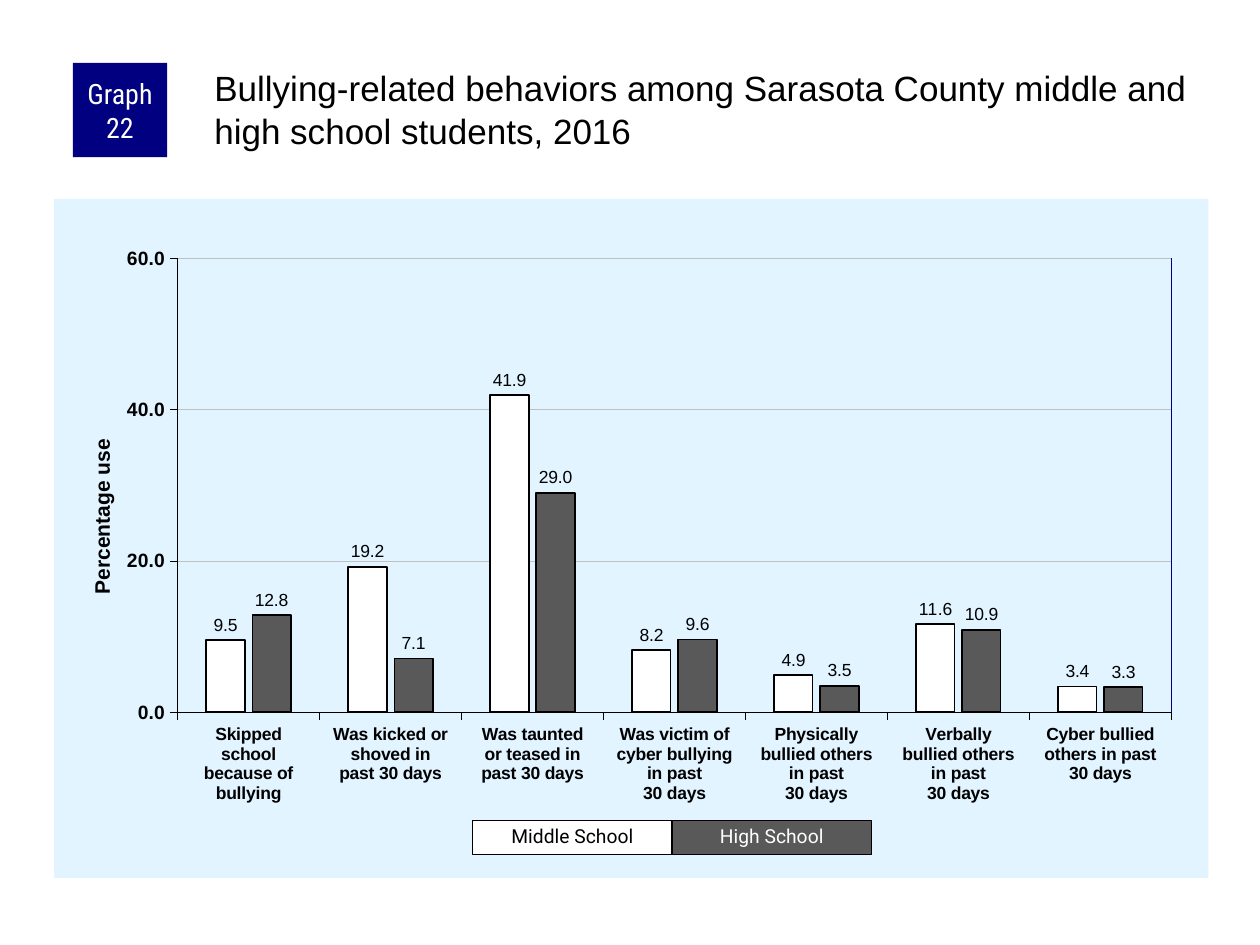
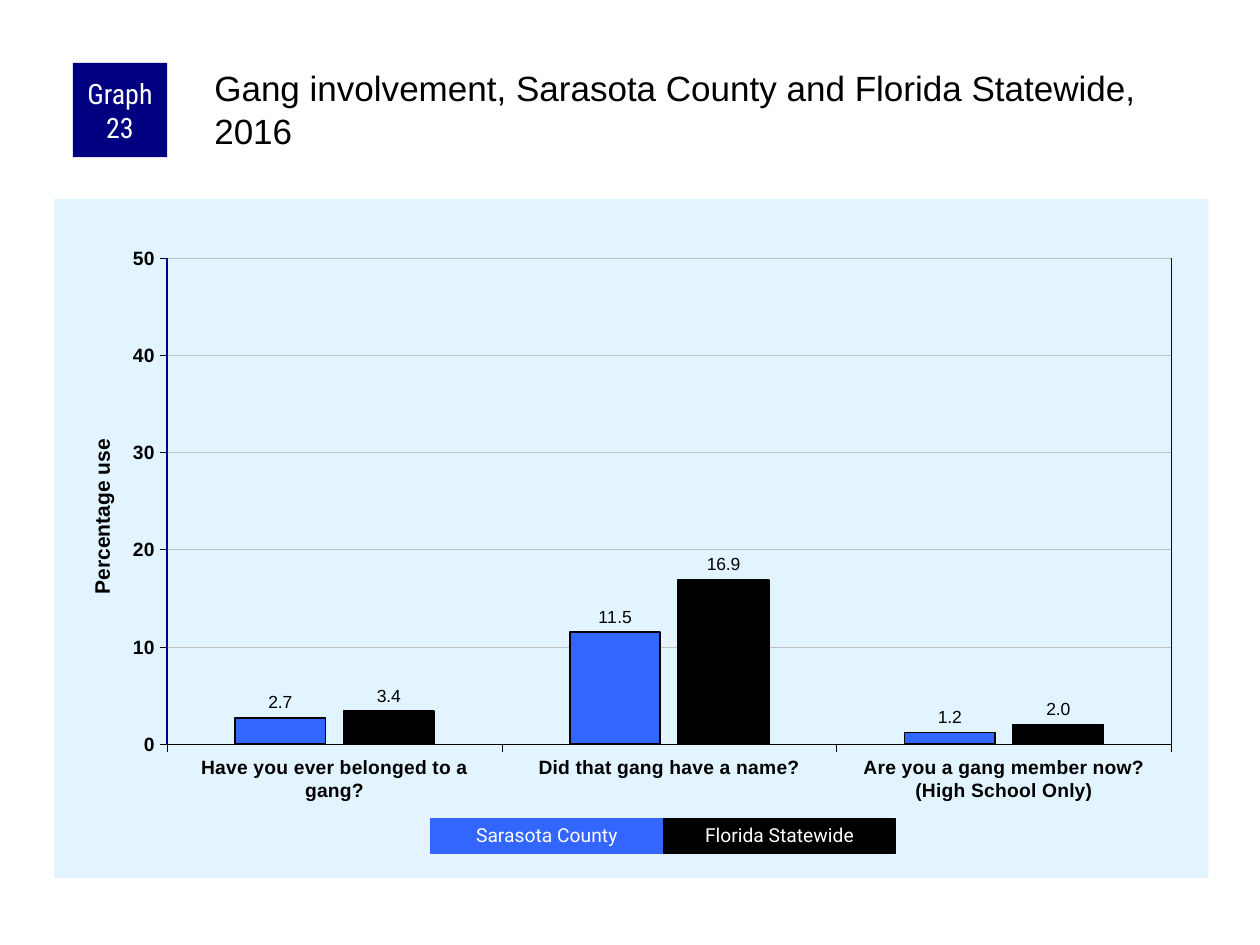
from dataclasses import dataclass

from lxml import etree
from pptx import Presentation
from pptx.chart.chart import Chart
from pptx.chart.data import CategoryChartData
from pptx.dml.color import RGBColor
from pptx.enum.chart import XL_CHART_TYPE, XL_LABEL_POSITION, XL_TICK_MARK
from pptx.enum.shapes import MSO_CONNECTOR, MSO_SHAPE
from pptx.enum.text import MSO_ANCHOR, MSO_AUTO_SIZE, PP_ALIGN
from pptx.oxml import parse_xml
from pptx.oxml.ns import nsdecls, qn
from pptx.slide import Slide
from pptx.util import Cm, Pt

COLUMNS = XL_CHART_TYPE.COLUMN_CLUSTERED
OUTSIDE_END = XL_LABEL_POSITION.OUTSIDE_END
TICK_OUT = XL_TICK_MARK.OUTSIDE
STRAIGHT = MSO_CONNECTOR.STRAIGHT
RECT = MSO_SHAPE.RECTANGLE
TOP, MIDDLE = MSO_ANCHOR.TOP, MSO_ANCHOR.MIDDLE
LEFT, CENTER = PP_ALIGN.LEFT, PP_ALIGN.CENTER
NO_AUTOFIT = MSO_AUTO_SIZE.NONE

NAVY, PALE_BLUE, BLUE = "000080", "E1F4FF", "3366FF"
BLACK, WHITE, DARK_GREY, GRID_GREY = "000000", "FFFFFF", "595959", "C0C0C0"
SANS, LEGEND_FONT, BADGE_FONT = "Arial", "Roboto", "Roboto Condensed"
CHART_LEFT, CHART_TOP, CHART_WIDTH, CHART_HEIGHT = 1.09, 4.01, 23.27, 13.69
LEGEND_HEIGHT = 0.69


@dataclass
class Series:
    name: str
    values: list[float]
    fill: str
    text: str
    outline: str


@dataclass
class Graph:
    number: int
    title: str
    categories: list[str]
    series: list[Series]
    maximum: int
    step: int
    value_format: str
    category_size: float
    plot: tuple[float, float, float, float]
    frame_sides: list[int]
    legend: tuple[float, float, float]


GRAPHS = [
    Graph(
        22, "Bullying-related behaviors among Sarasota County middle and high school students, 2016",
        ["Skipped\nschool\nbecause of\nbullying",
         "Was kicked or\nshoved in\npast 30 days",
         "Was taunted\nor teased in\npast 30 days",
         "Was victim of\ncyber bullying\nin past\n30 days",
         "Physically\nbullied others\nin past\n30 days",
         "Verbally\nbullied others\nin past\n30 days",
         "Cyber bullied\nothers in past\n30 days"],
        [Series("Middle School", [9.5, 19.2, 41.9, 8.2, 4.9, 11.6, 3.4], WHITE, BLACK, BLACK),
         Series("High School", [12.8, 7.1, 29, 9.6, 3.5, 10.9, 3.3], DARK_GREY, WHITE, BLACK)],
        60, 20, "0.0", 10, (0.107, 0.087, 0.861, 0.669), [1], (9.53, 16.54, 4.02)),
    Graph(
        23, "Gang involvement, Sarasota County and Florida Statewide, 2016",
        ["Have you ever belonged to a gang?",
         "Did that gang have a name?",
         "Are you a gang member now?\n(High School Only)"],
        [Series("Sarasota County", [2.7, 11.5, 1.2], BLUE, WHITE, BLUE),
         Series("Florida Statewide", [3.4, 16.9, 2], BLACK, WHITE, BLACK)],
        50, 10, "0", 11, (0.098, 0.087, 0.87, 0.716), [0, 1], (8.68, 16.51, 4.69)),
]


def rgb(color: str) -> RGBColor:
    """Turn a hex string into a colour."""
    return RGBColor.from_string(color)


def apply(target, **values) -> None:
    """Set each given attribute on the target."""
    for name, value in values.items():
        setattr(target, name, value)


def set_font(font, size: float, color: str = BLACK, name: str = SANS, bold: bool = False) -> None:
    """Format a font."""
    apply(font, size=Pt(size), name=name, bold=bold)
    font.color.rgb = rgb(color)


def set_line(line, color: str, width: float) -> None:
    """Give a line its colour and width."""
    line.color.rgb = rgb(color)
    line.width = Pt(width)


def layout_xml(x: float, y: float, size: tuple[float, float] | None = None) -> etree._Element:
    """Build a manual chart layout in fractions of the chart."""
    target = '<c:layoutTarget val="inner"/>' if size else ""
    extent = f'<c:w val="{size[0]}"/><c:h val="{size[1]}"/>' if size else ""
    return parse_xml(
        f'<c:layout {nsdecls("c")}><c:manualLayout>{target}<c:xMode val="edge"/>'
        f'<c:yMode val="edge"/><c:x val="{x}"/><c:y val="{y}"/>{extent}'
        '</c:manualLayout></c:layout>')


def set_background_and_plot(chart: Chart, graph: Graph) -> None:
    """Fill the chart area and fix the place of the plot."""
    chart.element.find(qn("c:chart")).addnext(parse_xml(
        f'<c:spPr {nsdecls("c", "a")}><a:solidFill><a:srgbClr val="{PALE_BLUE}"/></a:solidFill>'
        '<a:ln><a:noFill/></a:ln></c:spPr>'))
    area = chart.element.find(f'{qn("c:chart")}/{qn("c:plotArea")}')
    for old in area.findall(qn("c:layout")):
        area.remove(old)
    x, y, width, height = graph.plot
    area.insert(0, layout_xml(x, y, (width, height)))


def format_axes(chart: Chart, graph: Graph) -> None:
    """Format both axes, the gridlines and the axis title."""
    for axis, size in ((chart.category_axis, graph.category_size), (chart.value_axis, 11)):
        apply(axis, major_tick_mark=TICK_OUT)
        set_font(axis.tick_labels.font, size, bold=True)
        set_line(axis.format.line, BLACK, 0.25)
    axis = chart.value_axis
    apply(axis, minimum_scale=0, maximum_scale=graph.maximum, major_unit=graph.step,
          has_major_gridlines=True)
    apply(axis.tick_labels, number_format=graph.value_format, number_format_is_linked=False)
    set_line(axis.major_gridlines.format.line, GRID_GREY, 0.25)
    tf = axis.axis_title.text_frame
    tf.text = "Percentage use"
    set_font(tf.paragraphs[0].runs[0].font, 12, bold=True)
    title = axis.axis_title._element
    for old in title.findall(qn("c:layout")):
        title.remove(old)
    title.find(qn("c:tx")).addnext(layout_xml(0.027, 0.348))


def add_graph(s: Slide, graph: Graph) -> None:
    """Add the column chart."""
    data = CategoryChartData()
    data.categories = graph.categories
    for item in graph.series:
        data.add_series(item.name, item.values)
    chart = s.shapes.add_chart(COLUMNS, Cm(CHART_LEFT), Cm(CHART_TOP), Cm(CHART_WIDTH),
                               Cm(CHART_HEIGHT), data).chart
    apply(chart, has_legend=False, has_title=False)
    set_font(chart.font, 11.5)
    plot = chart.plots[0]
    apply(plot, gap_width=150, overlap=-20, vary_by_categories=False)
    for item, series in zip(graph.series, plot.series):
        series.format.fill.solid()
        series.format.fill.fore_color.rgb = rgb(item.fill)
        set_line(series.format.line, BLACK, 1)
        labels = series.data_labels
        apply(labels, show_value=True, number_format="0.0", number_format_is_linked=False,
              position=OUTSIDE_END)
        set_font(labels.font, 10)
    format_axes(chart, graph)
    set_background_and_plot(chart, graph)


def add_frame_sides(s: Slide, graph: Graph) -> None:
    """Draw the navy lines at the sides of the plot."""
    left, top, width, height = graph.plot
    y = CHART_TOP + CHART_HEIGHT * top
    for side in graph.frame_sides:
        x = CHART_LEFT + CHART_WIDTH * (left + side * width)
        line = s.shapes.add_connector(STRAIGHT, Cm(x), Cm(y), Cm(x), Cm(y + CHART_HEIGHT * height))
        set_line(line.line, NAVY, 1)
        etree.SubElement(line._element.spPr, qn("a:effectLst"))


def add_box(s: Slide, at: tuple[float, float, float, float], text: str, fill: str, color: str,
            font: str, size: float, outline: str = "", spacing: float = 1.0):
    """Add a filled rectangle with centred text."""
    sp = s.shapes.add_shape(RECT, *map(Cm, at))
    sp.shadow.inherit = False
    sp.fill.solid()
    sp.fill.fore_color.rgb = rgb(fill)
    if outline:
        set_line(sp.line, outline, 0.75)
    else:
        sp.line.fill.background()
    tf = sp.text_frame
    apply(tf, word_wrap=True, vertical_anchor=MIDDLE)
    p = tf.paragraphs[0]
    apply(p, alignment=CENTER, line_spacing=spacing)
    r = p.add_run()
    r.text = text
    set_font(r.font, size, color, font)
    return sp


def add_heading(s: Slide, graph: Graph) -> None:
    """Add the numbered badge and the title."""
    badge = add_box(s, (1.47, 1.27, 1.9, 1.9), f"Graph {graph.number}", NAVY, WHITE, BADGE_FONT, 16)
    apply(badge.text_frame, margin_left=Cm(0.13), margin_right=Cm(0.13),
          margin_top=0, margin_bottom=0)
    title = s.shapes.title
    apply(title, left=Cm(4.24), top=Cm(1.27), width=Cm(20.12), height=Cm(2.11))
    tf = title.text_frame
    apply(tf, word_wrap=True, auto_size=NO_AUTOFIT, vertical_anchor=TOP,
          margin_left=Cm(0.08), margin_top=Cm(0.08), margin_right=0, margin_bottom=0)
    tf.text = graph.title
    p = tf.paragraphs[0]
    p.alignment = LEFT
    set_font(p.runs[0].font, 20)


def add_legend(s: Slide, graph: Graph) -> None:
    """Add one legend box per series, side by side."""
    left, top, width = graph.legend
    for i, item in enumerate(graph.series):
        add_box(s, (left + i * width, top, width, LEGEND_HEIGHT), item.name, item.fill,
                item.text, LEGEND_FONT, 11, item.outline, 0.9)


def main() -> None:
    """Build the slides and save them."""
    prs = Presentation()
    apply(prs, slide_width=Cm(25.4), slide_height=Cm(19.05))
    for graph in GRAPHS:
        s = prs.slides.add_slide(prs.slide_layouts[5])
        for draw in (add_graph, add_frame_sides, add_heading, add_legend):
            draw(s, graph)
    prs.save("out.pptx")


if __name__ == "__main__":
    main()
